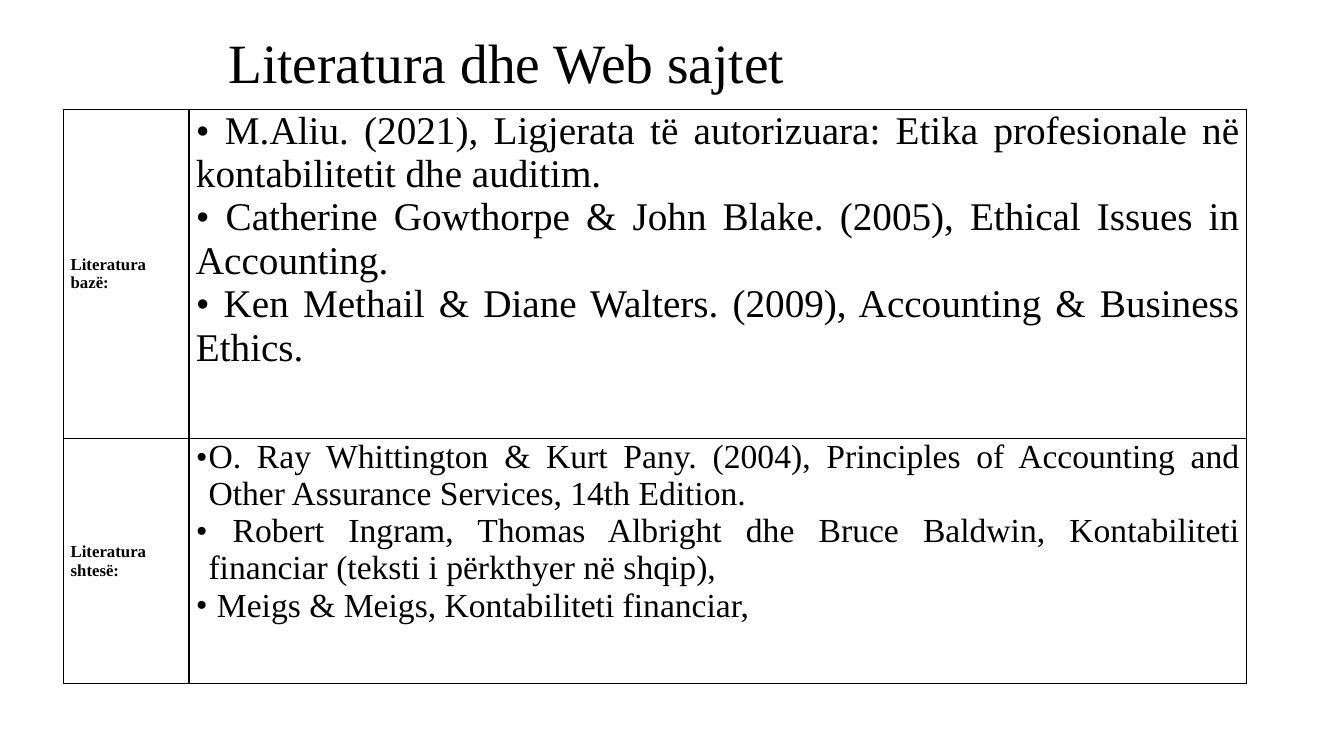
from dataclasses import dataclass

from lxml.etree import SubElement
from pptx import Presentation
from pptx.dml.color import RGBColor
from pptx.enum.text import MSO_ANCHOR as Anchor, PP_ALIGN as Align
from pptx.oxml.ns import qn
from pptx.table import _Cell as Cell
from pptx.text.text import TextFrame as Frame
from pptx.util import Pt

BLACK = RGBColor(0, 0, 0)
FONT = "Times New Roman"
COLS = (89.5, 755.5)


@dataclass
class Row:
    label: str
    books: list[str]
    size: float
    height: float
    indent: float = 0


ROWS = [
    Row("Literatura bazë:", [
        " M.Aliu. (2021), Ligjerata të autorizuara: Etika profesionale në kontabilitetit dhe auditim.",
        " Catherine Gowthorpe & John Blake. (2005), Ethical Issues in Accounting.",
        " Ken Methail & Diane Walters. (2009), Accounting & Business Ethics.",
    ], size=28, height=235.25),
    Row("Literatura shtesë:", [
        "O. Ray Whittington & Kurt Pany. (2004), Principles of Accounting and Other Assurance Services, 14th Edition.",
        " Robert Ingram, Thomas Albright dhe Bruce Baldwin, Kontabiliteti financiar (teksti i përkthyer në shqip),",
        " Meigs & Meigs, Kontabiliteti financiar,",
    ], size=24, height=175.25, indent=9),
]


def write(frame: Frame, lines: list[str], *, size: float, bold: bool = False,
          align: Align = Align.LEFT, bullet: bool = False,
          indent: float = 0, spacing: float = 1.0) -> None:
    frame.word_wrap = True
    for i, line in enumerate(lines):
        para = frame.add_paragraph() if i else frame.paragraphs[0]
        para.alignment = align
        para.line_spacing = spacing
        run = para.add_run()
        run.text = line
        font = run.font
        font.name, font.size, font.bold = FONT, Pt(size), bold
        font.color.rgb = BLACK
        if bullet:
            props = para._p.get_or_add_pPr()
            props.set("marL", str(Pt(indent)))
            props.set("indent", str(-Pt(indent)))
            SubElement(props, qn("a:buFont"), typeface=FONT)
            SubElement(props, qn("a:buChar"), char="•")


def style(cell: Cell, anchor: Anchor) -> None:
    cell.vertical_anchor = anchor
    cell.margin_left = cell.margin_right = Pt(5)
    cell.margin_top = cell.margin_bottom = 0
    props = cell._tc.get_or_add_tcPr()
    for side in ("lnL", "lnR", "lnT", "lnB"):
        edge = SubElement(props, qn(f"a:{side}"), w=str(Pt(1)))
        fill = SubElement(edge, qn("a:solidFill"))
        SubElement(fill, qn("a:srgbClr"), val=str(BLACK))
    cell.fill.background()


def main() -> None:
    deck = Presentation()
    deck.slide_width, deck.slide_height = Pt(960), Pt(540)
    slide = deck.slides.add_slide(deck.slide_layouts[6])

    # Title
    title = slide.shapes.add_textbox(Pt(156), Pt(21.6), Pt(648), Pt(50.4))
    title.text_frame.vertical_anchor = Anchor.MIDDLE
    write(title.text_frame, ["Literatura dhe Web sajtet"], size=39.6, spacing=0.9)

    # Reading list
    table = slide.shapes.add_table(
        len(ROWS), len(COLS), Pt(45.5), Pt(78), Pt(sum(COLS)),
        Pt(sum(row.height for row in ROWS))).table
    table.first_row = table.horz_banding = False
    for col, width in zip(table.columns, COLS):
        col.width = Pt(width)
    for i, row in enumerate(ROWS):
        table.rows[i].height = Pt(row.height)
        label, books = table.cell(i, 0), table.cell(i, 1)
        style(label, Anchor.MIDDLE)
        style(books, Anchor.TOP)
        write(label.text_frame, [row.label], size=12, bold=True)
        write(books.text_frame, row.books, size=row.size,
              align=Align.JUSTIFY, bullet=True, indent=row.indent)

    deck.save("out.pptx")


if __name__ == "__main__":
    main()
